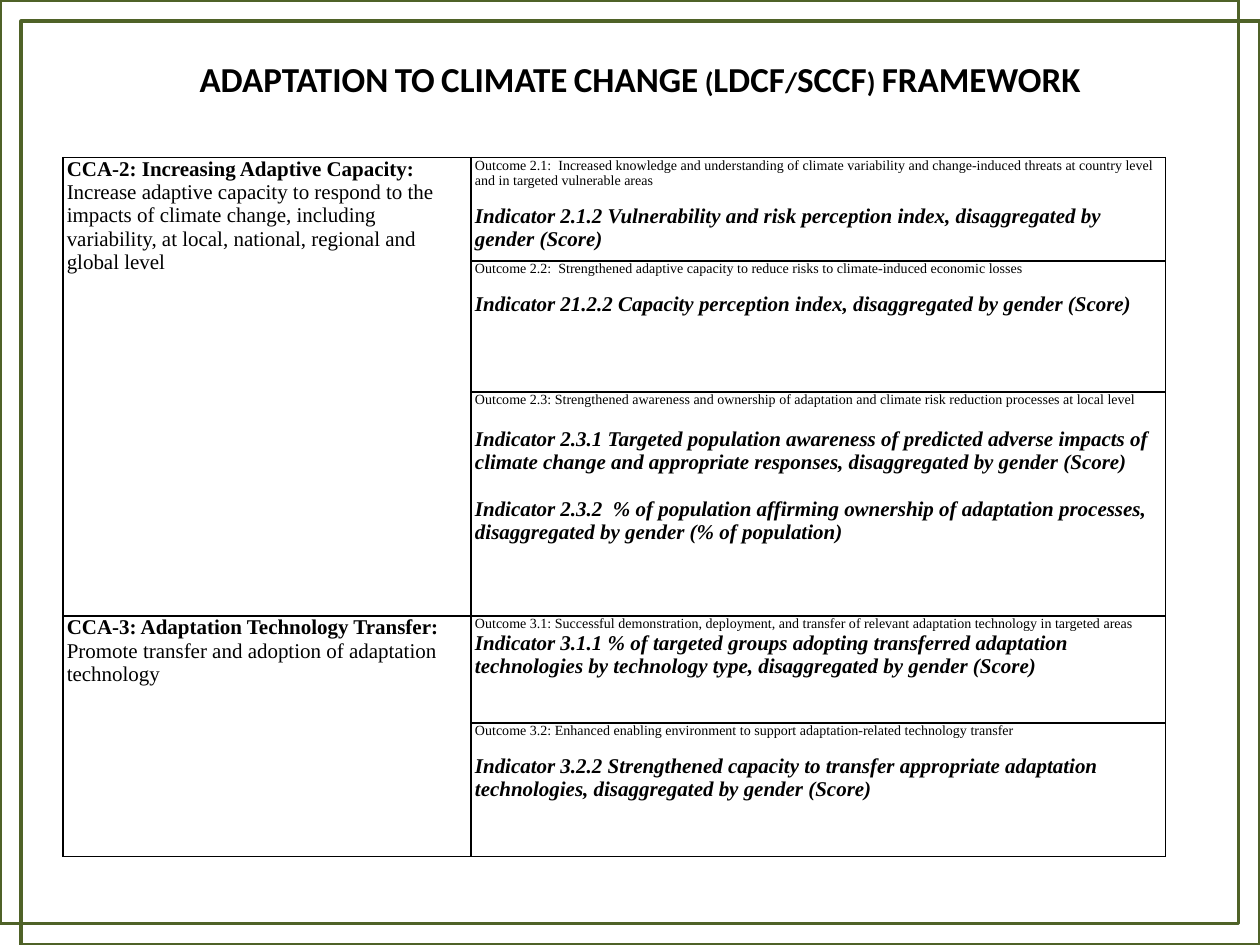
from lxml import etree
from pptx import Presentation
from pptx.dml.color import RGBColor
from pptx.enum.shapes import MSO_SHAPE
from pptx.enum.text import MSO_ANCHOR, PP_ALIGN
from pptx.oxml.ns import qn
from pptx.util import Inches, Pt

RECTANGLE = MSO_SHAPE.RECTANGLE
MIDDLE, CENTER = MSO_ANCHOR.MIDDLE, PP_ALIGN.CENTER

THEME = {
    "text": "000000", "frame": "4F6228", "border": "000000",
    "title_font": "Calibri", "body_font": "Times New Roman",
    "title": 20, "body": 12, "outcome": 8,
    "frame_width": 2.25, "border_width": 1,
}

# Content: each objective holds outcomes; each outcome holds
# (gap above in points, indicator) pairs
TITLE = "ADAPTATION TO CLIMATE CHANGE (LDCF/SCCF) FRAMEWORK"
OBJECTIVES = [
    ("CCA-2: Increasing Adaptive Capacity:",
     " Increase adaptive capacity to respond to the impacts of climate change, "
     "including variability, at local, national, regional and global level",
     [
         ("Outcome 2.1:  Increased knowledge and understanding of climate variability "
          "and change-induced threats at country level and in targeted vulnerable areas",
          [(9.2, "Indicator 2.1.2 Vulnerability and risk perception index, "
                 "disaggregated by gender (Score)")]),
         ("Outcome 2.2:  Strengthened adaptive capacity to reduce risks to "
          "climate-induced economic losses",
          [(9.2, "Indicator 21.2.2 Capacity perception index, disaggregated by "
                 "gender (Score)")]),
         ("Outcome 2.3: Strengthened awareness and ownership of adaptation and "
          "climate risk reduction processes at local level",
          [(11.5, "Indicator 2.3.1 Targeted population awareness of predicted adverse "
                  "impacts of climate change and appropriate responses, "
                  "disaggregated by gender (Score)"),
           (13.3, "Indicator 2.3.2  % of population affirming ownership of adaptation "
                  "processes, disaggregated by gender (% of population)")]),
     ]),
    ("CCA-3: Adaptation Technology Transfer:",
     " Promote transfer and adoption of adaptation technology",
     [
         ("Outcome 3.1: Successful demonstration, deployment, and transfer of "
          "relevant adaptation technology in targeted areas",
          [(0, "Indicator 3.1.1 % of targeted groups adopting transferred adaptation "
               "technologies by technology type, disaggregated by gender (Score)")]),
         ("Outcome 3.2: Enhanced enabling environment to support "
          "adaptation-related technology transfer",
          [(9.2, "Indicator 3.2.2 Strengthened capacity to transfer appropriate "
                 "adaptation technologies, disaggregated by gender (Score)")]),
     ]),
]
COL_WIDTHS = [3.24, 5.51]
ROW_HEIGHTS = [0.82, 1.04, 1.78, 0.85, 1.06]
TABLE_LEFT, TABLE_TOP = 0.5, 1.25
FRAME_OFFSETS = [0.17, 0]
FRAME_SIZE = (9.83, 7.33)


def add_run(p, text, size, font="body_font", bold=False, italic=False):
    r = p.add_run()
    r.text = text
    r.font.name = THEME[font]
    r.font.size = Pt(THEME[size])
    r.font.bold, r.font.italic = bold, italic
    r.font.color.rgb = RGBColor.from_string(THEME["text"])
    return r


def format_cell(cell):
    cell.margin_left = cell.margin_right = Inches(0.03)
    cell.margin_top = cell.margin_bottom = 0
    tcPr = cell._tc.get_or_add_tcPr()
    for side in ("lnL", "lnR", "lnT", "lnB"):
        ln = etree.SubElement(tcPr, qn(f"a:{side}"), w=str(Pt(THEME["border_width"])))
        fill = etree.SubElement(ln, qn("a:solidFill"))
        etree.SubElement(fill, qn("a:srgbClr"), val=THEME["border"])
    cell.fill.background()


prs = Presentation()
prs.slide_width, prs.slide_height = Inches(10), Inches(7.5)
s = prs.slides.add_slide(prs.slide_layouts[5])

# Title
title = s.shapes.title
title.left, title.top = Inches(0.58), 0
title.width, title.height = Inches(9), Inches(1.25)
tf = title.text_frame
tf.vertical_anchor = MIDDLE
p = tf.paragraphs[0]
p.alignment = CENTER
r = add_run(p, TITLE, "title", "title_font", bold=True)
r._r.get_or_add_rPr().set("cap", "small")

# Table grid
table = s.shapes.add_table(
    len(ROW_HEIGHTS), len(COL_WIDTHS), Inches(TABLE_LEFT), Inches(TABLE_TOP),
    Inches(sum(COL_WIDTHS)), Inches(sum(ROW_HEIGHTS))).table
table.first_row = table.horz_banding = False
for column, width in zip(table.columns, COL_WIDTHS):
    column.width = Inches(width)
for row, height in zip(table.rows, ROW_HEIGHTS):
    row.height = Inches(height)
for cell in table.iter_cells():
    format_cell(cell)

# Objectives span the rows of their outcomes
row = 0
for heading, description, outcomes in OBJECTIVES:
    cell = table.cell(row, 0)
    cell.merge(table.cell(row + len(outcomes) - 1, 0))
    p = cell.text_frame.paragraphs[0]
    add_run(p, heading, "body", bold=True)
    add_run(p, description, "body")
    for outcome, indicators in outcomes:
        tf = table.cell(row, 1).text_frame
        add_run(tf.paragraphs[0], outcome, "outcome")
        for gap, indicator in indicators:
            p = tf.add_paragraph()
            p.space_before = Pt(gap)
            add_run(p, indicator, "body", bold=True, italic=True)
        row += 1

# Two offset frames around the slide
for offset in FRAME_OFFSETS:
    sp = s.shapes.add_shape(RECTANGLE, Inches(offset), Inches(offset),
                            *map(Inches, FRAME_SIZE))
    sp.shadow.inherit = False
    sp.fill.background()
    sp.line.color.rgb = RGBColor.from_string(THEME["frame"])
    sp.line.width = Pt(THEME["frame_width"])

prs.save("out.pptx")
